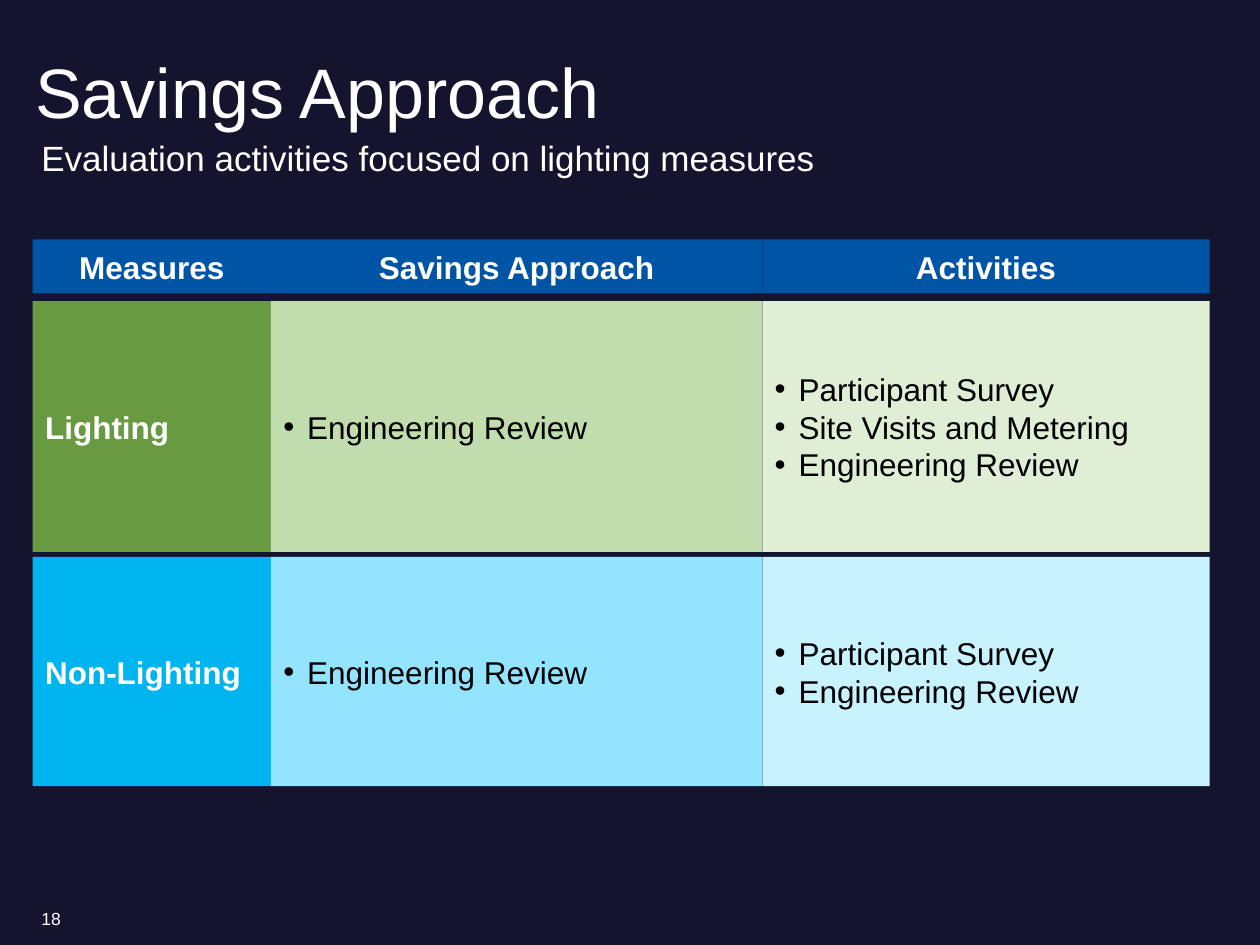
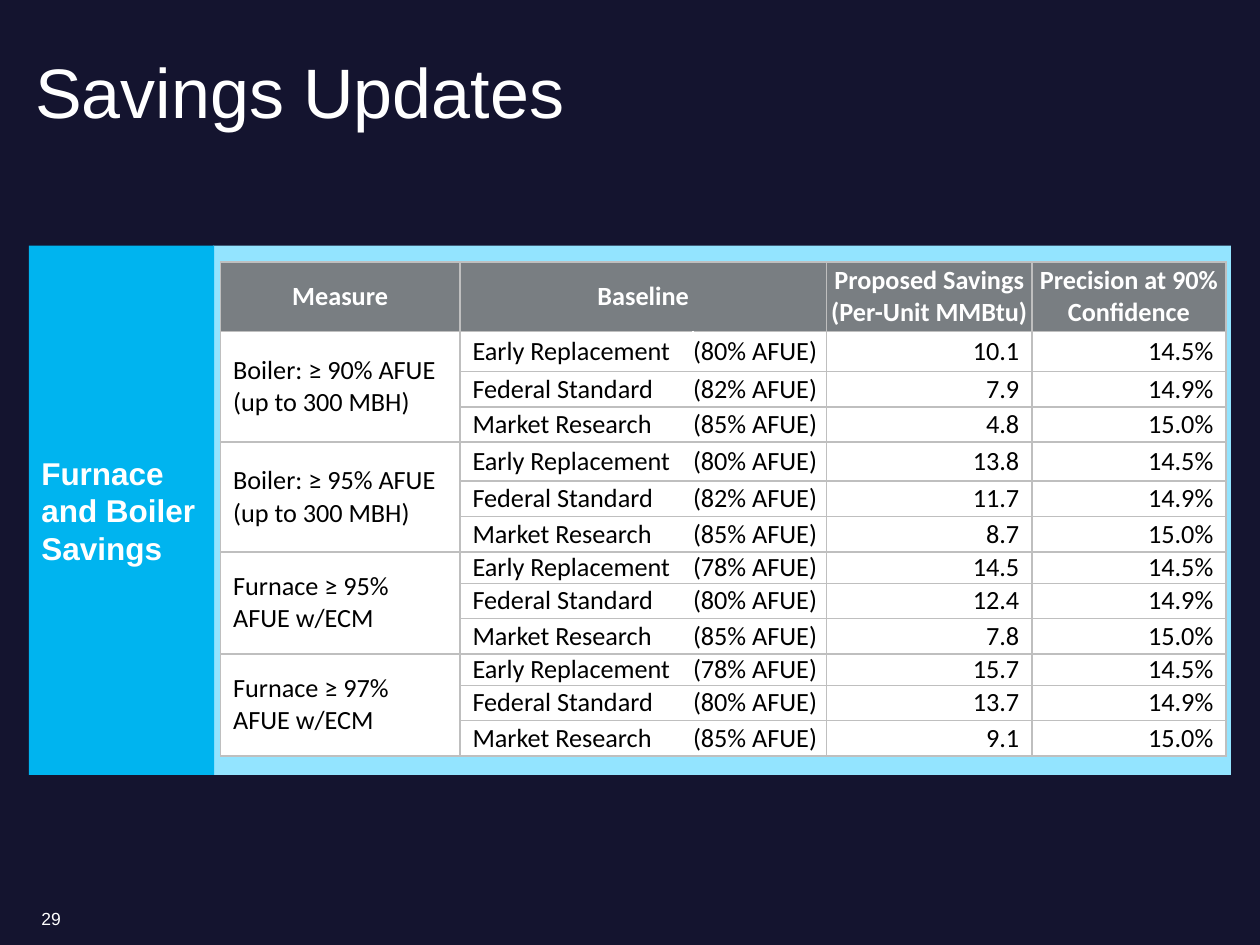
from dataclasses import dataclass

from lxml.etree import SubElement
from pptx import Presentation
from pptx.dml.color import RGBColor
from pptx.enum.shapes import MSO_SHAPE
from pptx.enum.text import MSO_ANCHOR, PP_ALIGN
from pptx.oxml.ns import qn
from pptx.slide import Slide
from pptx.table import _Cell
from pptx.text.text import TextFrame
from pptx.util import Inches, Pt

NAVY = RGBColor(0x14, 0x14, 0x2F)
WHITE = RGBColor(0xFF, 0xFF, 0xFF)
BLACK = RGBColor(0x00, 0x00, 0x00)
BLUE = RGBColor(0x00, 0x54, 0xA5)
GREEN = RGBColor(0x67, 0x9A, 0x41)
MID_GREEN = RGBColor(0xC1, 0xDC, 0xAD)
PALE_GREEN = RGBColor(0xE0, 0xEE, 0xD6)
CYAN = RGBColor(0x00, 0xB4, 0xEF)
MID_CYAN = RGBColor(0x93, 0xE4, 0xFF)
PALE_CYAN = RGBColor(0xC9, 0xF2, 0xFF)
GRAY = RGBColor(0x79, 0x7E, 0x82)
BORDER_GRAY = RGBColor(0xBF, 0xBF, 0xBF)
BULLET_INDENT = Inches(0.19)


@dataclass(frozen=True)
class Box:
    """A rectangle on the slide, in inches."""

    left: float
    top: float
    width: float
    height: float

    def lengths(self) -> tuple:
        """Return the four lengths in the order python-pptx takes them."""
        return tuple(Inches(n) for n in (self.left, self.top, self.width, self.height))


@dataclass(frozen=True)
class MeasureBand:
    """One measure of the approach grid with its row place and colours."""

    name: str
    top: float
    height: float
    approaches: tuple[str, ...]
    activities: tuple[str, ...]
    fills: tuple[RGBColor, RGBColor, RGBColor]


@dataclass(frozen=True)
class EquipmentGroup:
    """Efficiency levels, savings and row heights of one equipment measure."""

    name: str
    efficiencies: tuple[int, int, int]
    savings: tuple[str, str, str]
    first_height: float


TITLE_BOX = Box(0.23, 0.27, 9.44, 0.79)
SUBTITLE_BOX = Box(0.23, 1.07, 9.44, 0.47)
NUMBER_BOX = Box(0.23, 7.09, 3, 0.4)

GRID_COLUMNS = (("Measures", 0.26, 1.89), ("Savings Approach", 2.15, 3.9), ("Activities", 6.05, 3.55))
MEASURE_BANDS = (
    MeasureBand("Lighting", 2.39, 1.99, ("Engineering Review",),
                ("Participant Survey", "Site Visits and Metering", "Engineering Review"),
                (GREEN, MID_GREEN, PALE_GREEN)),
    MeasureBand("Non-Lighting", 4.42, 1.82, ("Engineering Review",),
                ("Participant Survey", "Engineering Review"),
                (CYAN, MID_CYAN, PALE_CYAN)),
)

TABLE_COLUMN_WIDTHS = (1.9, 1.85, 1.06, 1.63, 1.54)
TABLE_HEADERS = ("Measure", "Baseline", "", "Proposed Savings (Per-Unit MMBtu)", "Precision at 90% Confidence")
HEADER_HEIGHT = 0.55
ROW_HEIGHT = 0.28
BASELINES = (("Early Replacement", "14.5%"), ("Federal Standard", "14.9%"), ("Market Research", "15.0%"))
EQUIPMENT_GROUPS = (
    EquipmentGroup("Boiler: ≥ 90% AFUE (up to 300 MBH)", (80, 82, 85), ("10.1", "7.9", "4.8"), 0.32),
    EquipmentGroup("Boiler: ≥ 95% AFUE (up to 300 MBH)", (80, 82, 85), ("13.8", "11.7", "8.7"), 0.31),
    EquipmentGroup("Furnace ≥ 95% AFUE w/ECM", (78, 80, 85), ("14.5", "12.4", "7.8"), 0.23),
    EquipmentGroup("Furnace ≥ 97% AFUE w/ECM", (78, 80, 85), ("15.7", "13.7", "9.1"), 0.2),
)


def write_text(text_frame: TextFrame, *lines: str, size: float = 18, color: RGBColor = WHITE,
               font: str = "Arial", bold: bool = False, align: PP_ALIGN = PP_ALIGN.LEFT,
               line_spacing: float = 1.0, bulleted: bool = False) -> None:
    """Write one paragraph per line in the given format."""
    text_frame.word_wrap = True
    for index, line in enumerate(lines):
        paragraph = text_frame.add_paragraph() if index else text_frame.paragraphs[0]
        paragraph.alignment = align
        paragraph.line_spacing = line_spacing
        if bulleted:
            properties = paragraph._p.get_or_add_pPr()
            properties.set("marL", str(BULLET_INDENT))
            properties.set("indent", str(-BULLET_INDENT))
            SubElement(properties, qn("a:buFont"), typeface="Arial")
            SubElement(properties, qn("a:buChar"), char="•")
        run = paragraph.add_run()
        run.text = line
        run.font.size = Pt(size)
        run.font.name = font
        run.font.bold = bold
        run.font.color.rgb = color


def add_text(slide: Slide, box: Box, text: str, anchor: MSO_ANCHOR = MSO_ANCHOR.MIDDLE,
             **text_format) -> TextFrame:
    """Add a text box and return its text frame."""
    text_frame = slide.shapes.add_textbox(*box.lengths()).text_frame
    text_frame.vertical_anchor = anchor
    write_text(text_frame, text, **text_format)
    return text_frame


def add_panel(slide: Slide, box: Box, fill: RGBColor, *lines: str, **text_format) -> None:
    """Add a borderless filled rectangle holding the given lines."""
    shape = slide.shapes.add_shape(MSO_SHAPE.RECTANGLE, *box.lengths())
    shape.shadow.inherit = False
    shape.fill.solid()
    shape.fill.fore_color.rgb = fill
    shape.line.fill.background()
    shape.text_frame.vertical_anchor = MSO_ANCHOR.MIDDLE
    write_text(shape.text_frame, *lines, **text_format)


def add_base_slide(presentation: Presentation, title: str, number: int) -> Slide:
    """Add a dark slide with its title and slide number."""
    slide = presentation.slides.add_slide(presentation.slide_layouts[6])
    slide.background.fill.solid()
    slide.background.fill.fore_color.rgb = NAVY
    text_frame = add_text(slide, TITLE_BOX, title, MSO_ANCHOR.BOTTOM, size=40, line_spacing=0.9)
    text_frame.margin_left = Inches(0.05)
    text_frame.margin_top = text_frame.margin_bottom = 0
    add_text(slide, NUMBER_BOX, str(number), size=10)
    return slide


def format_cell(cell: _Cell, text: str, fill: RGBColor, sides: str = "LRTB",
                margin: float = 0.1, **text_format) -> None:
    """Write a table cell with its fill, side margins and borders."""
    cell.vertical_anchor = MSO_ANCHOR.MIDDLE
    cell.margin_left = cell.margin_right = Inches(margin)
    cell.margin_top = cell.margin_bottom = 0
    properties = cell._tc.get_or_add_tcPr()
    for side in sides:
        line = SubElement(properties, qn(f"a:ln{side}"), w=str(Pt(1)))
        SubElement(SubElement(line, qn("a:solidFill")), qn("a:srgbClr"), val=str(BORDER_GRAY))
    cell.fill.solid()
    cell.fill.fore_color.rgb = fill
    write_text(cell.text_frame, text, size=15, font="Calibri", **text_format)


def add_savings_table(slide: Slide) -> None:
    """Add the table of proposed savings by measure and baseline."""
    heights = [HEADER_HEIGHT]
    for group in EQUIPMENT_GROUPS:
        heights += [group.first_height, ROW_HEIGHT, ROW_HEIGHT]
    box = Box(1.75, 2.08, sum(TABLE_COLUMN_WIDTHS), sum(heights))
    table = slide.shapes.add_table(len(heights), len(TABLE_COLUMN_WIDTHS), *box.lengths()).table
    table.first_row = table.horz_banding = False
    for column, width in zip(table.columns, TABLE_COLUMN_WIDTHS):
        column.width = Inches(width)
    for row, height in zip(table.rows, heights):
        row.height = Inches(height)

    for column_index, header in enumerate(TABLE_HEADERS):
        format_cell(table.cell(0, column_index), header, GRAY, margin=0, bold=True, align=PP_ALIGN.CENTER)
    table.cell(0, 1).merge(table.cell(0, 2))

    for group_index, group in enumerate(EQUIPMENT_GROUPS):
        first_row = 1 + group_index * len(BASELINES)
        rows = zip(BASELINES, group.efficiencies, group.savings)
        for offset, ((baseline, precision), efficiency, saving) in enumerate(rows):
            cells = table.rows[first_row + offset].cells
            format_cell(cells[0], "" if offset else group.name, WHITE, color=BLACK)
            format_cell(cells[1], baseline, WHITE, sides="LTB", color=BLACK)
            format_cell(cells[2], f"({efficiency}% AFUE)", WHITE, sides="RTB", margin=0, color=BLACK)
            format_cell(cells[3], saving, WHITE, color=BLACK, align=PP_ALIGN.RIGHT)
            format_cell(cells[4], precision, WHITE, color=BLACK, align=PP_ALIGN.RIGHT)
        table.cell(first_row, 0).merge(table.cell(first_row + len(BASELINES) - 1, 0))


def build_approach_slide(presentation: Presentation) -> None:
    """Build the grid of measures, approaches and activities."""
    slide = add_base_slide(presentation, "Savings Approach", 18)
    for band in MEASURE_BANDS:
        contents = ((band.name,), band.approaches, band.activities)
        for index, (lines, fill) in enumerate(zip(contents, band.fills)):
            _, left, width = GRID_COLUMNS[index]
            is_name = index == 0
            add_panel(slide, Box(left, band.top, width, band.height), fill, *lines,
                      color=WHITE if is_name else BLACK, bold=is_name, bulleted=not is_name)
    for header, left, width in GRID_COLUMNS:
        add_panel(slide, Box(left, 1.9, width, 0.43), BLUE, header, bold=True, align=PP_ALIGN.CENTER)
    add_text(slide, SUBTITLE_BOX, "Evaluation activities focused on lighting measures",
             MSO_ANCHOR.TOP, size=20, line_spacing=0.9)


def build_updates_slide(presentation: Presentation) -> None:
    """Build the furnace and boiler savings table on its panel."""
    slide = add_base_slide(presentation, "Savings Updates", 29)
    add_panel(slide, Box(1.69, 1.95, 8.08, 4.2), MID_CYAN)
    add_savings_table(slide)
    add_panel(slide, Box(0.23, 1.95, 1.47, 4.2), CYAN, "Furnace and Boiler Savings", bold=True)


def main() -> None:
    """Build and save the presentation."""
    presentation = Presentation()
    presentation.slide_width = Inches(10)
    presentation.slide_height = Inches(7.5)
    build_approach_slide(presentation)
    build_updates_slide(presentation)
    presentation.save("out.pptx")


if __name__ == "__main__":
    main()
